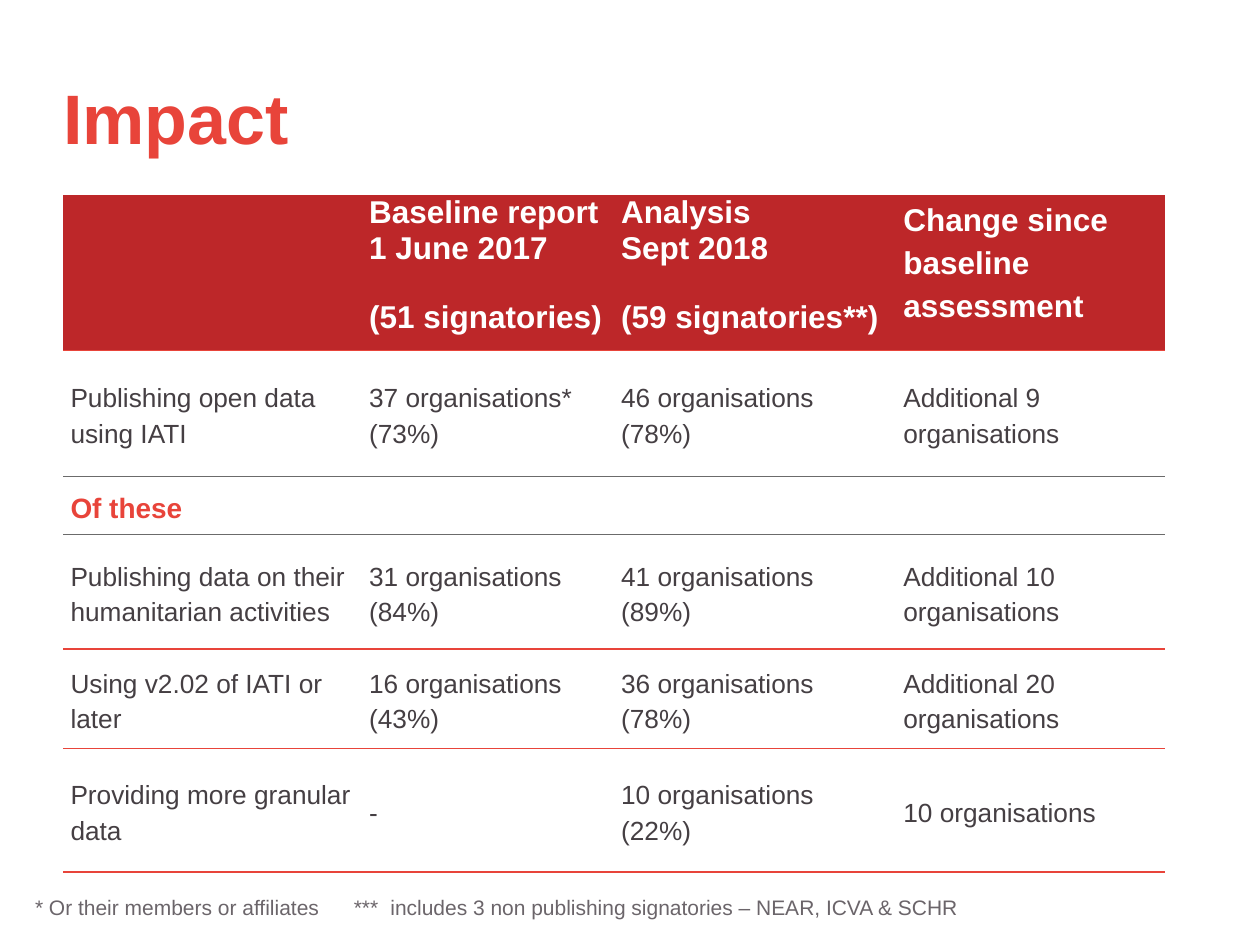
from lxml import etree
from pptx import Presentation
from pptx import util as u
from pptx.dml.color import RGBColor
from pptx.enum import text
from pptx.oxml.ns import qn

RED, CRIMSON, DARK, GREY, WHITE = "E8443A", "BD2729", "453F43", "6B656A", "FFFFFF"
RULE_GREY = "6B6B6B"
NO_STYLE = "{2D5ABB26-0587-4C30-8999-92F81FD0307C}"

COLUMNS = [2.37, 2, 2.24, 2.14]
# Each row: height, bottom rule (colour, points), cells; a cell is a list of paragraphs
ROWS = [
    (1.23, (RED, 1), [[],
                      ["Baseline report", "1 June 2017", "(51 signatories)"],
                      ["Analysis", "Sept 2018", "(59 signatories**)"],
                      ["Change since baseline assessment"]]),
    (1, (RULE_GREY, 0.75), [["Publishing open data using IATI"], ["37 organisations* (73%)"],
                            ["46 organisations (78%)"], ["Additional 9 organisations"]]),
    (0.46, (RULE_GREY, 0.75), [["Of these"], [], [], []]),
    (0.91, (RED, 1), [["Publishing data on their humanitarian activities"],
                      ["31 organisations (84%)"], ["41 organisations (89%)"],
                      ["Additional 10 organisations"]]),
    (0.79, (RED, 1), [["Using v2.02 of IATI or later"], ["16 organisations (43%)"],
                      ["36 organisations (78%)"], ["Additional 20 organisations"]]),
    (0.98, (RED, 1), [["Providing more granular data"], ["-"],
                      ["10 organisations (22%)"], ["10 organisations"]]),
]
HEADER_ROW, SUBHEAD_ROW = 0, 2
FOOTNOTE = ("* Or their members or affiliates\t***\t"
            "includes 3 non publishing signatories – NEAR, ICVA & SCHR")
FOOTNOTE_TABS = [2.53, 2.82]


def add_run(para, words, size, colour, bold=False):
    span = para.add_run()
    span.text = words
    span.font.name = "Arial"
    span.font.size = u.Pt(size)
    span.font.bold = bold
    span.font.color.rgb = RGBColor.from_string(colour)


def add_bottom_rule(cell, colour, points):
    line = etree.Element(qn("a:lnB"), w=str(u.Pt(points)))
    fill = etree.SubElement(line, qn("a:solidFill"))
    etree.SubElement(fill, qn("a:srgbClr"), val=colour)
    cell._tc.get_or_add_tcPr().insert(0, line)


def fill_cell(cell, paragraphs, row):
    header = row == HEADER_ROW
    if header:
        cell.fill.solid()
        cell.fill.fore_color.rgb = RGBColor.from_string(CRIMSON)
        size, colour, bold = 18, WHITE, True
    else:
        cell.fill.background()
        cell.vertical_anchor = text.MSO_ANCHOR.MIDDLE
        size, colour, bold = (16, RED, True) if row == SUBHEAD_ROW else (15, DARK, False)
    cell.margin_left = cell.margin_right = u.Inches(0.06)
    cell.margin_top = cell.margin_bottom = 0
    for i, words in enumerate(paragraphs):
        para = cell.text_frame.paragraphs[0] if i == 0 else cell.text_frame.add_paragraph()
        if i == len(paragraphs) - 1:
            para.line_spacing = 1.22
            para.space_before = u.Pt(15 if i else 0)
            para.space_after = u.Pt(6)
        add_run(para, words, size, colour, bold)


def add_title(page):
    title = page.shapes.title
    title.left, title.top, title.width, title.height = map(u.Inches, (0.5, 0.3, 9, 1.25))
    frame = title.text_frame
    frame.margin_left = frame.margin_right = frame.margin_top = frame.margin_bottom = 0
    frame.vertical_anchor = text.MSO_ANCHOR.MIDDLE
    frame.auto_size = text.MSO_AUTO_SIZE.NONE
    frame.paragraphs[0].alignment = text.PP_ALIGN.LEFT
    add_run(frame.paragraphs[0], "Impact", 40, RED, True)


def add_impact_table(page):
    heights = [height for height, _, _ in ROWS]
    frame = page.shapes.add_table(len(ROWS), len(COLUMNS), u.Inches(0.5), u.Inches(1.55),
                                  u.Inches(sum(COLUMNS)), u.Inches(sum(heights)))
    table = frame.table
    table.horz_banding = False
    next(frame._element.iter(qn("a:tableStyleId"))).text = NO_STYLE
    for column, width in zip(table.columns, COLUMNS):
        column.width = u.Inches(width)
    for r, (height, rule, cells) in enumerate(ROWS):
        table.rows[r].height = u.Inches(height)
        for c, paragraphs in enumerate(cells):
            fill_cell(table.cell(r, c), paragraphs, r)
            add_bottom_rule(table.cell(r, c), *rule)


def add_footnote(page):
    box = page.shapes.add_textbox(*map(u.Inches, (0.18, 7.05, 9.64, 0.3)))
    box.text_frame.word_wrap = True
    para = box.text_frame.paragraphs[0]
    tabs = etree.SubElement(para._p.get_or_add_pPr(), qn("a:tabLst"))
    for stop in FOOTNOTE_TABS:
        etree.SubElement(tabs, qn("a:tab"), pos=str(u.Inches(stop)), algn="l")
    add_run(para, FOOTNOTE, 12, GREY)


def main():
    deck = Presentation()
    deck.slide_width, deck.slide_height = u.Inches(10), u.Inches(7.5)
    page = deck.slides.add_slide(deck.slide_layouts[5])
    add_title(page)
    add_impact_table(page)
    add_footnote(page)
    deck.save("out.pptx")


if __name__ == "__main__":
    main()
